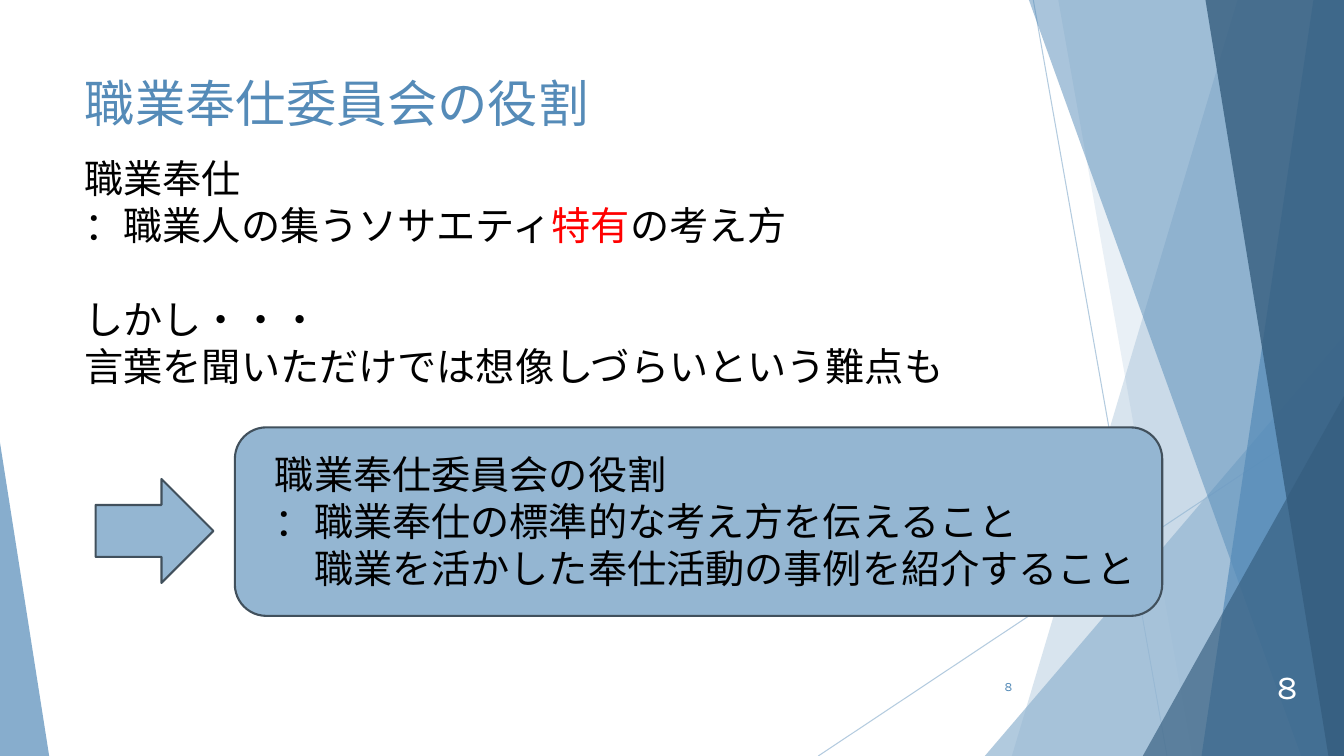
from dataclasses import dataclass
from typing import Optional

from lxml.etree import SubElement
from pptx import Presentation
from pptx.dml.color import RGBColor
from pptx.enum.shapes import MSO_CONNECTOR, MSO_SHAPE
from pptx.enum.text import MSO_ANCHOR, PP_ALIGN
from pptx.oxml.ns import qn
from pptx.util import Cm, Pt

WIDE, HIGH = 33.87, 19.05
FONT = "Karla"
PALE, BLUE, DEEP, EDGE = "94B6D2", "558BB8", "355D7E", "41505C"
BLACK, WHITE, RED = "000000", "FFFFFF", "FF0000"


@dataclass
class Ray:
    start: tuple[float, float]
    end: tuple[float, float]


@dataclass
class Band:
    top: float
    foot: float
    color: str
    alpha: int


@dataclass
class Wedge:
    left: float
    top: float
    width: float
    color: str
    alpha: int
    apex: float = 1


@dataclass
class Block:
    kind: MSO_SHAPE
    box: tuple[float, float, float, float]


@dataclass
class Number:
    left: float
    size: float
    color: str


RAYS = [
    Ray((26.04, 0), (29.41, HIGH)),
    Ray((WIDE, 10.24), (20.62, HIGH)),
]
PANES = [
    Band(31.19, 25.5, PALE, 36),
    Band(26.67, 30.05, PALE, 20),
    Wedge(24.82, 8.46, 9.05, PALE, 72),
    Band(25.93, 32.79, BLUE, 50),
    Band(33.1, 30.28, BLUE, 70),
    Band(30.38, 33.48, DEEP, 80),
    Wedge(28.8, 9.98, 5.07, DEEP, 66),
    Wedge(0, 11.15, 1.24, BLUE, 70, 0),
]
NUMBERS = [Number(31.04, 24, WHITE), Number(23.85, 9, BLUE)]
BLOCKS = [
    Block(MSO_SHAPE.RIGHT_ARROW, (2.41, 12.07, 2.97, 2.62)),
    Block(MSO_SHAPE.ROUNDED_RECTANGLE, (5.92, 10.77, 23.37, 4.75)),
]


def tint(fill, color: str) -> None:
    fill.solid()
    fill.fore_color.rgb = RGBColor.from_string(color)


def fade(shape, alpha: int) -> None:
    for node in list(shape._element.iter(qn("a:srgbClr"))):
        SubElement(node, qn("a:alpha")).set("val", str(alpha * 1000))


def write(para, text: str, *, size: float = 28, color: str = BLACK,
          align: Optional[PP_ALIGN] = None, before: float = 0,
          indent: float = 0) -> None:
    run = para.add_run()
    run.text = text
    run.font.name = FONT
    run.font.size = Pt(size)
    run.font.color.rgb = RGBColor.from_string(color)
    if align is not None:
        para.alignment = align
    if before:
        para.space_before = Pt(before)
    if indent:
        props = para._p.get_or_add_pPr()
        props.set("marL", str(Pt(indent)))
        props.set("indent", "0")


def frame(slide, *box: float, anchor: MSO_ANCHOR = MSO_ANCHOR.TOP):
    body = slide.shapes.add_textbox(*map(Cm, box)).text_frame
    body.word_wrap = True
    body.vertical_anchor = anchor
    return body


def draw_ray(slide, ray: Ray) -> None:
    line = slide.shapes.add_connector(
        MSO_CONNECTOR.STRAIGHT, *map(Cm, ray.start + ray.end))
    tint(line.line.fill, PALE)
    line.line.width = Pt(0.75)
    SubElement(line._element.spPr, qn("a:effectLst"))
    fade(line, 70)


def draw_pane(slide, pane: Band | Wedge) -> None:
    if isinstance(pane, Band):
        pen = slide.shapes.build_freeform(Cm(pane.top), 0)
        ends = [(WIDE, 0), (WIDE, HIGH), (pane.foot, HIGH)]
        pen.add_line_segments([(Cm(x), Cm(y)) for x, y in ends], close=True)
        shape = pen.convert_to_shape()
    else:
        box = (pane.left, pane.top, pane.width, HIGH - pane.top)
        shape = slide.shapes.add_shape(
            MSO_SHAPE.ISOSCELES_TRIANGLE, *map(Cm, box))
        shape.adjustments[0] = pane.apex
    shape.shadow.inherit = False
    tint(shape.fill, pane.color)
    shape.line.fill.background()
    fade(shape, pane.alpha)


def draw_block(slide, block: Block) -> None:
    shape = slide.shapes.add_shape(block.kind, *map(Cm, block.box))
    shape.shadow.inherit = False
    tint(shape.fill, PALE)
    tint(shape.line.fill, EDGE)
    shape.line.width = Pt(1.5)


def draw_title(slide) -> None:
    title = slide.shapes.title
    title.left, title.top, title.width, title.height = map(
        Cm, (1.88, 1.7, 23.88, 3.66))
    title.text_frame.vertical_anchor = MSO_ANCHOR.TOP
    write(title.text_frame.paragraphs[0], "職業奉仕委員会の役割",
          size=36, color=BLUE, align=PP_ALIGN.LEFT)
    title._element.getparent().append(title._element)


def draw_body(slide) -> None:
    body = frame(slide, 1.88, 3.76, 27.33, 8.64)
    write(body.paragraphs[0], "職業奉仕")
    claim = body.add_paragraph()
    write(claim, "：職業人の集うソサエティ")
    write(claim, "特有", color=RED)
    write(claim, "の考え方")
    write(body.add_paragraph(), "しかし・・・", before=33.6)
    write(body.add_paragraph(), "言葉を聞いただけでは想像しづらいという難点も")


def draw_role(slide) -> None:
    role = frame(slide, 6.68, 11.23, 22.61, 3.84)
    write(role.paragraphs[0], "職業奉仕委員会の役割")
    write(role.add_paragraph(), "：職業奉仕の標準的な考え方を伝えること")
    write(role.add_paragraph(), "職業を活かした奉仕活動の事例を紹介すること", indent=28)


def main() -> None:
    deck = Presentation()
    deck.slide_width, deck.slide_height = Cm(WIDE), Cm(HIGH)
    slide = deck.slides.add_slide(deck.slide_layouts[5])
    tint(slide.background.fill, WHITE)
    for ray in RAYS:
        draw_ray(slide, ray)
    for pane in PANES:
        draw_pane(slide, pane)
    for num in NUMBERS:
        cell = frame(slide, num.left, 16.79, 1.91, 1.02,
                     anchor=MSO_ANCHOR.MIDDLE)
        write(cell.paragraphs[0], "8", size=num.size, color=num.color,
              align=PP_ALIGN.RIGHT)
    draw_title(slide)
    draw_body(slide)
    for block in BLOCKS:
        draw_block(slide, block)
    draw_role(slide)
    deck.save("out.pptx")


if __name__ == "__main__":
    main()
